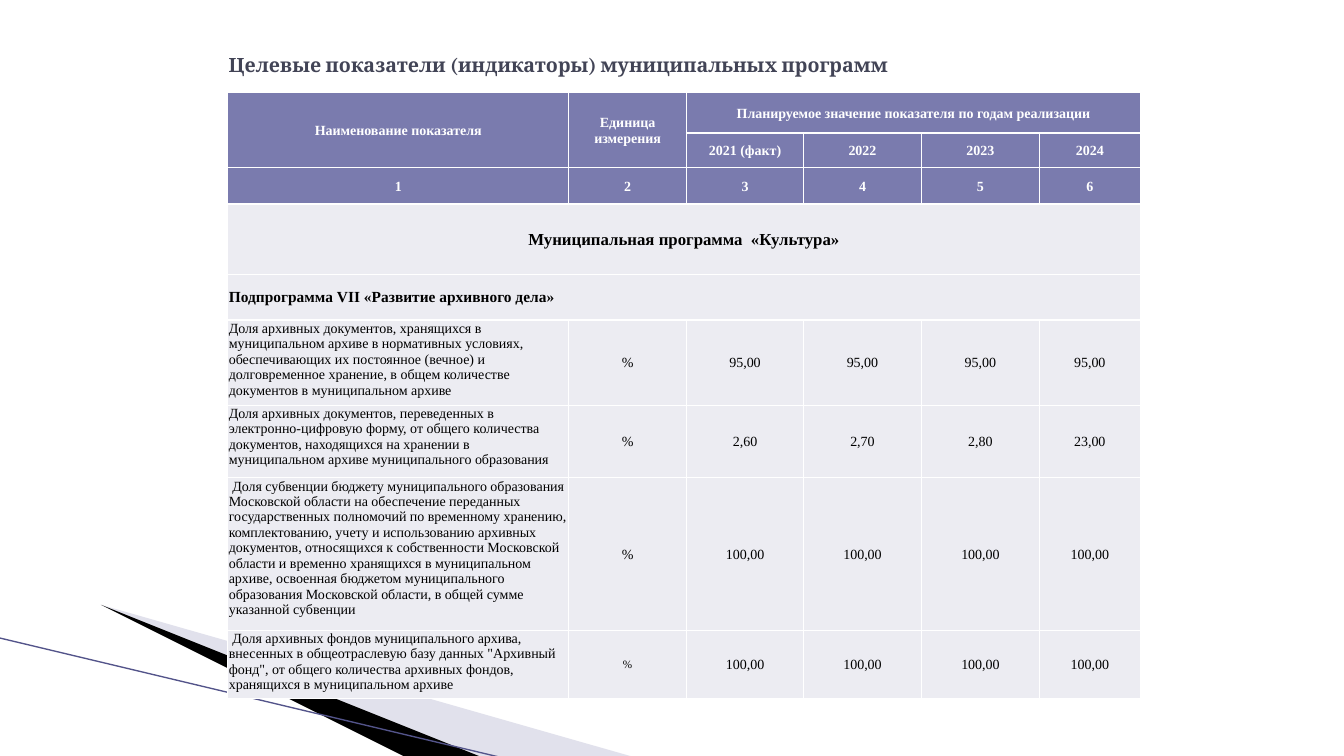
from lxml import etree
from pptx import Presentation
from pptx.dml import color as clr
from pptx.enum import shapes as shp, text as txt
from pptx.oxml import ns
from pptx.util import Inches, Pt

HUES = {"title": "424456", "head": "7A7BAE", "body": "ECECF2", "white": "FFFFFF",
        "black": "000000", "haze": "B6B6D1", "line": "53548A"}
COLS = [3.38, 1.17, 1.16, 1.17, 1.17, 1]
ROWS = [0.4, 0.32, 0.36, 0.7, 0.45, 0.79, 0.72, 1.4, 0.63]
MERGES = [(0, 0, 1, 0), (0, 1, 1, 1), (0, 2, 0, 5), (3, 0, 3, 5), (4, 0, 4, 5)]
HEADS = 3
GOALS = 5
DATA = [
    ["Наименование показателя", "Единица измерения",
     "Планируемое значение показателя по годам реализации"],
    ["", "", "2021 (факт)", "2022", "2023", "2024"],
    ["1", "2", "3", "4", "5", "6"],
    ["Муниципальная программа  «Культура»"],
    ["Подпрограмма VII «Развитие архивного дела»"],
    ["Доля архивных документов, хранящихся в муниципальном архиве в нормативных "
     "условиях, обеспечивающих их постоянное (вечное) и долговременное хранение, "
     "в общем количестве документов в муниципальном архиве",
     "%", "95,00", "95,00", "95,00", "95,00"],
    ["Доля архивных документов, переведенных в электронно-цифровую форму, от общего "
     "количества документов, находящихся на хранении в муниципальном архиве "
     "муниципального образования",
     "%", "2,60", "2,70", "2,80", "23,00"],
    [" Доля субвенции бюджету муниципального образования Московской области на "
     "обеспечение переданных государственных полномочий по временному хранению, "
     "комплектованию, учету и использованию архивных документов, относящихся к "
     "собственности Московской области и временно хранящихся в муниципальном архиве, "
     "освоенная бюджетом муниципального образования Московской области, в общей "
     "сумме указанной субвенции",
     "%", "100,00", "100,00", "100,00", "100,00"],
    [" Доля архивных фондов муниципального архива, внесенных в общеотраслевую базу "
     "данных \"Архивный фонд\", от общего количества архивных фондов, хранящихся в "
     "муниципальном архиве",
     "%", "100,00", "100,00", "100,00", "100,00"],
]


def rgb(name):
    return clr.RGBColor.from_string(HUES[name])


def style(item, **values):
    for key, value in values.items():
        setattr(item, key, value)


def write(frame, words, hue, align, **font):
    """Put one formatted run in the first paragraph."""
    para = frame.paragraphs[0]
    para.alignment = align
    run = para.add_run()
    run.text = words
    style(run.font, **font)
    run.font.color.rgb = rgb(hue)


def wedge(slide, left, top, points, hue, alpha=None):
    """Draw a filled outline whose points are offsets in inches."""
    spots = [(left + x, top + y) for x, y in points]
    pen = slide.shapes.build_freeform(*spots[0], scale=Inches(1))
    pen.add_line_segments(spots[1:], close=True)
    shape = pen.convert_to_shape()
    shape.shadow.inherit = False
    shape.line.fill.background()
    shape.fill.solid()
    shape.fill.fore_color.rgb = rgb(hue)
    if alpha:
        tint = shape.fill._xPr.find(".//" + ns.qn("a:srgbClr"))
        etree.SubElement(tint, ns.qn("a:alpha"), val=str(alpha * 1000))


def add_decor(slide, left, top):
    """Draw the wedges and line of the lower left corner."""
    wedge(slide, left + 0.73, top + 0.17, [(0, 0), (7.2, 1), (5.35, 1)], "haze", 40)
    wedge(slide, left + 0.71, top + 0.16, [(0, 0), (5.38, 1.01), (4.25, 1.01)], "black")
    line = slide.shapes.add_connector(
        shp.MSO_CONNECTOR.STRAIGHT, Inches(left), Inches(top),
        Inches(left + 4.95), Inches(top + 1.18))
    line.line.width = Pt(0.95)
    line.line.color.rgb = rgb("line")
    etree.SubElement(line._element.spPr, ns.qn("a:effectLst"))


def add_title(slide, left, top, width, height):
    box = slide.shapes.add_textbox(*map(Inches, (left, top, width, height)))
    style(box.text_frame, word_wrap=True, vertical_anchor=txt.MSO_ANCHOR.MIDDLE)
    write(box.text_frame, "Целевые показатели (индикаторы) муниципальных программ",
          "title", txt.PP_ALIGN.LEFT, size=Pt(14), name="Cambria", bold=True)


def fill_cell(cell, row, col, words):
    head, goal = row < HEADS, row >= GOALS
    inset = Inches(0.01)
    style(cell, margin_left=inset, margin_right=inset, margin_top=inset, margin_bottom=0,
          vertical_anchor=txt.MSO_ANCHOR.TOP if goal and col == 0
          else txt.MSO_ANCHOR.MIDDLE)
    cell.fill.solid()
    cell.fill.fore_color.rgb = rgb("head" if head else "body")
    if not words:
        return
    size = {(3, 0): 12, (4, 0): 11, (8, 1): 8}.get((row, col), 10)
    left = row > HEADS and col == 0
    write(cell.text_frame, words, "white" if head else "black",
          txt.PP_ALIGN.LEFT if left else txt.PP_ALIGN.CENTER,
          size=Pt(size), name="Times New Roman", bold=not goal)


def add_goals(slide, left, top):
    """Place the table of target values."""
    box = map(Inches, (left, top, sum(COLS), sum(ROWS)))
    table = slide.shapes.add_table(len(ROWS), len(COLS), *box).table
    style(table, first_row=False, horz_banding=False)
    for col, width in zip(table.columns, COLS):
        col.width = Inches(width)
    for row, height in zip(table.rows, ROWS):
        row.height = Inches(height)
    for r, words in enumerate(DATA):
        for c in range(len(COLS)):
            fill_cell(table.cell(r, c), r, c, words[c] if c < len(words) else "")
    for r, c, last, end in MERGES:
        table.cell(r, c).merge(table.cell(last, end))


def main():
    deck = Presentation()
    style(deck, slide_width=Inches(13.33), slide_height=Inches(7.5))
    slide = deck.slides.add_slide(deck.slide_layouts[6])
    add_decor(slide, 0, 6.33)
    add_title(slide, 2.17, 0.3, 9, 0.69)
    add_goals(slide, 2.26, 0.92)
    deck.save("out.pptx")


if __name__ == "__main__":
    main()
